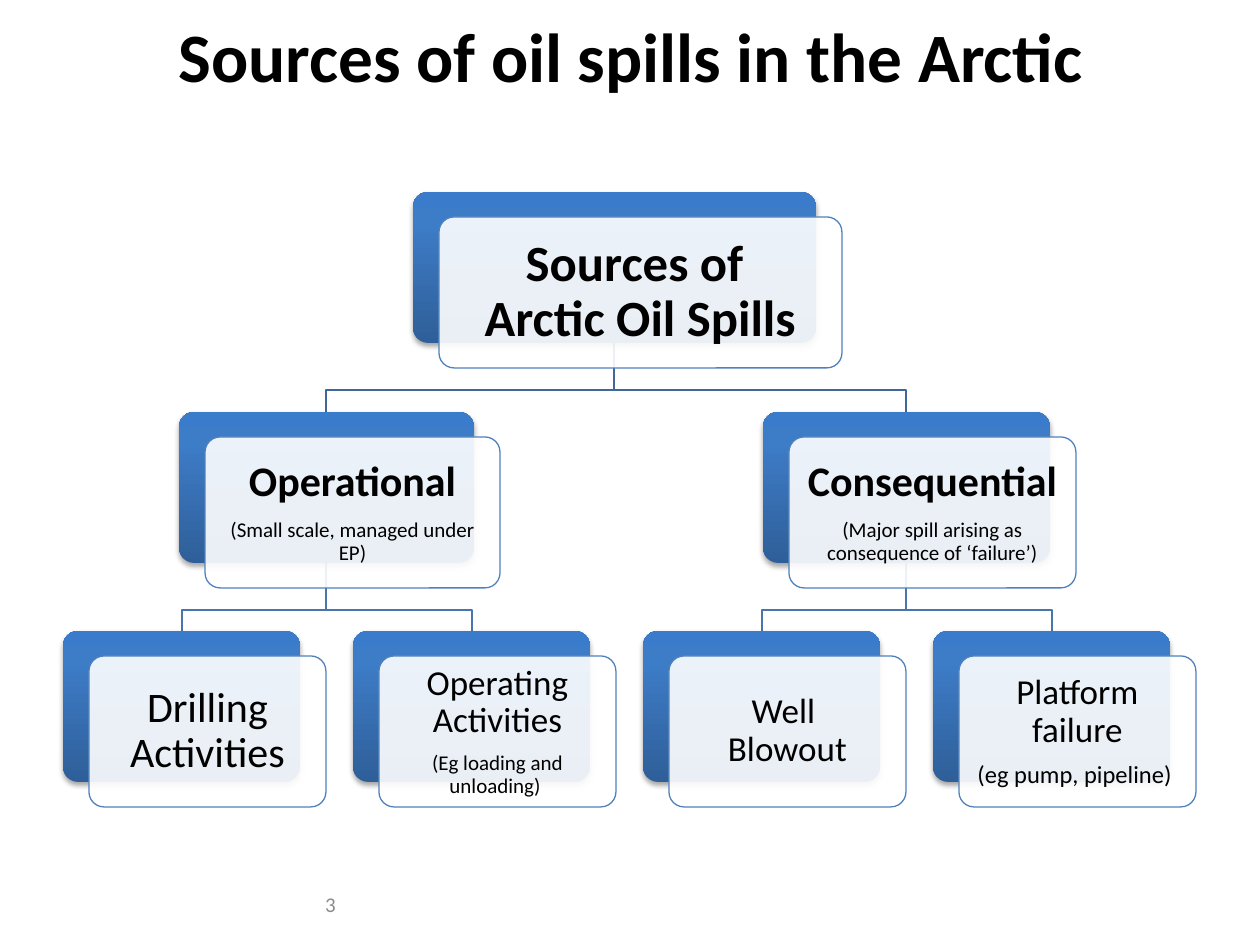
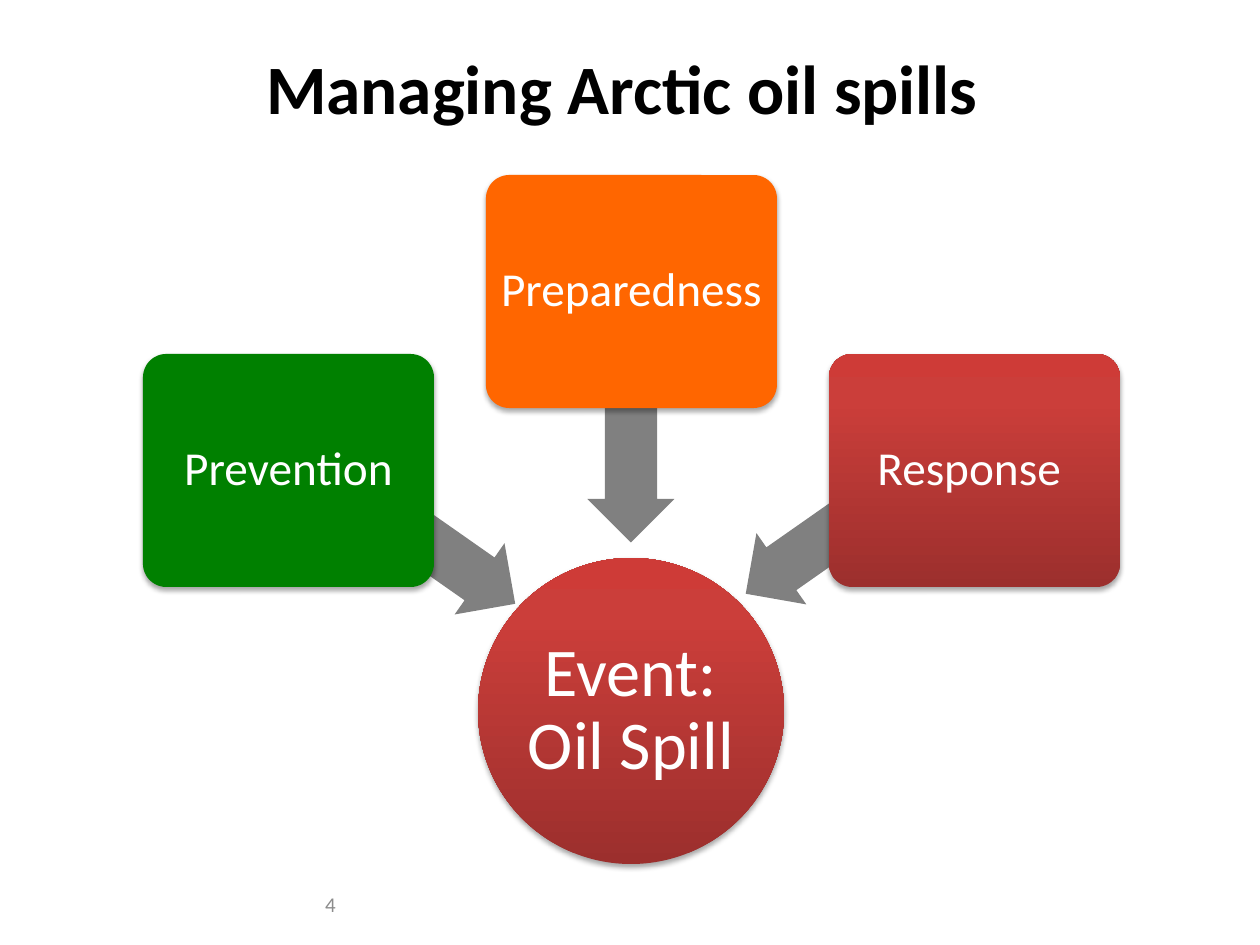
import lxml.etree
import pptx
import pptx.dml.color
import pptx.enum.shapes
import pptx.enum.text
import pptx.oxml.ns
import pptx.util

PX = 914400 / 126
SHAPE = pptx.enum.shapes.MSO_SHAPE
ALIGN = pptx.enum.text.PP_ALIGN
MIDDLE = pptx.enum.text.MSO_ANCHOR.MIDDLE

COLORS = {
    "ink": "000000",
    "white": "FFFFFF",
    "number": "8C8C8C",
    "outline": "4F81BD",
    "upper_edge": "3F6797",
    "lower_edge": "4875AC",
    "prevention": "008000",
    "preparedness": "FF6600",
    "arrow": "808080",
}
GRADIENTS = {
    "blue": ((0, "2F5F99"), (80, "3D7CC7"), (100, "3A7CCB")),
    "red": ((0, "9C2F2D"), (80, "CB3E3A"), (100, "CE3B37")),
}
TITLE = {"size": pptx.util.Pt(39.6), "bold": True}
NUMBER = {"size": pptx.util.Pt(12)}

NODE_HEIGHT = 151
LABEL_SHIFT = (26, 25)
EDGE_DROP = 47
LEVEL_TOPS = (192, 412, 631)
LEAF_LEFT, LEAF_STEP, LEAF_WIDTH = 63, 290, 237
CARD_LEFT, CARD_STEP, CARD_SIZE = 143, 343, (291, 233)


def px(value):
    return pptx.util.Emu(round(value * PX))


def rgb(name):
    return pptx.dml.color.RGBColor.from_string(COLORS[name])


def add_element(parent, tag, **values):
    element = lxml.etree.SubElement(parent, pptx.oxml.ns.qn(tag))
    for key, value in values.items():
        element.set(key, str(value))
    return element


def set_attributes(target, values):
    for name, value in values.items():
        setattr(target, name, value)


def write(shape, lines, color, inset=None, align=ALIGN.CENTER, tight=False):
    frame = shape.text_frame
    set_attributes(frame, {"word_wrap": True, "vertical_anchor": MIDDLE})
    if inset is not None:
        sides = ("left", "top", "right", "bottom")
        set_attributes(frame, {f"margin_{side}": px(inset) for side in sides})
    for index, (text, style) in enumerate(lines):
        para = frame.add_paragraph() if index else frame.paragraphs[0]
        para.alignment = align
        if tight:
            para.line_spacing = 0.9
            after = add_element(para._p.get_or_add_pPr(), "a:spcAft")
            add_element(after, "a:spcPct", val=35000)
        para.text = text
        for span in para.runs:
            set_attributes(span.font, {"name": "Calibri", **style})
            span.font.color.rgb = rgb(color)


def add_text(page, left, top, width, height, text, color, style, align):
    box = page.shapes.add_textbox(px(left), px(top), px(width), px(height))
    write(box, [(text, style)], color, align=align)


def fill_gradient(shape, name):
    shape.fill.gradient()
    shape.fill.gradient_angle = 90
    stops = shape._element.spPr.find(".//" + pptx.oxml.ns.qn("a:gsLst"))
    for stop in list(stops):
        stops.remove(stop)
    for position, color in GRADIENTS[name]:
        stop = add_element(stops, "a:gs", pos=position * 1000)
        add_element(stop, "a:srgbClr", val=color)


def add_shadow(shape):
    effects = shape._element.spPr.find(pptx.oxml.ns.qn("a:effectLst"))
    shadow = add_element(
        effects, "a:outerShdw", blurRad=pptx.util.Pt(3.1), dist=pptx.util.Pt(1.8),
        dir=90 * 60000, rotWithShape=0)
    color = add_element(shadow, "a:srgbClr", val=COLORS["ink"])
    add_element(color, "a:alpha", val=35000)


def add_block(page, kind, left, top, width, height, fill, shadow=True):
    shape = page.shapes.add_shape(kind, px(left), px(top), px(width), px(height))
    shape.shadow.inherit = False
    shape.line.fill.background()
    if kind == SHAPE.ROUNDED_RECTANGLE:
        shape.adjustments[0] = 0.1
    if fill in GRADIENTS:
        fill_gradient(shape, fill)
    else:
        shape.fill.solid()
        shape.fill.fore_color.rgb = rgb(fill)
    if shadow:
        add_shadow(shape)
    return shape


def outline(shape, color):
    shape.line.color.rgb = rgb(color)
    shape.line.width = pptx.util.Pt(0.75)


def add_node(page, left, top, width, inset, lines):
    add_block(page, SHAPE.ROUNDED_RECTANGLE, left, top, width, NODE_HEIGHT, "blue")
    across, down = LABEL_SHIFT
    label = add_block(page, SHAPE.ROUNDED_RECTANGLE, left + across, top + down,
                      width, NODE_HEIGHT, "white", shadow=False)
    fill = label._element.spPr.find(pptx.oxml.ns.qn("a:solidFill"))
    add_element(fill[0], "a:alpha", val=90000)
    outline(label, "outline")
    write(label, lines, "ink", inset, tight=True)


def add_edge(page, parent, child, color):
    start, end = parent[0] + parent[2] / 2, child[0] + child[2] / 2
    bottom = parent[1] + NODE_HEIGHT
    bend = bottom + EDGE_DROP
    builder = page.shapes.build_freeform(start, bottom, scale=PX)
    builder.add_line_segments([(start, bend), (end, bend), (end, child[1])], close=False)
    edge = builder.convert_to_shape()
    edge.shadow.inherit = False
    edge.fill.background()
    outline(edge, color)


def add_arrow(page, left, top, rotation):
    arrow = add_block(page, SHAPE.LEFT_ARROW, left, top, 252, 87, "arrow", shadow=False)
    arrow.rotation = rotation
    arrow.adjustments[0] = 0.6
    arrow.adjustments[1] = 0.5


def add_page(deck, title, left, top, number):
    page = deck.slides.add_slide(deck.slide_layouts[6])
    add_text(page, left, top, 1134, 97, title, "ink", TITLE, ALIGN.CENTER)
    add_text(page, 54, 879, 294, 50, number, "number", NUMBER, ALIGN.RIGHT)
    return page


def style(size, bold=False):
    return {"size": pptx.util.Pt(size), "bold": bold}


def add_sources(deck):
    page = add_page(deck, "Sources of oil spills in the Arctic", 64, 6, "3")
    root_top, branch_top, leaf_top = LEVEL_TOPS
    root = (413, root_top, 403, 15, [("Sources of \vArctic Oil Spills", style(29, True))])
    branches = [
        (179, branch_top, 295, 13, [
            ("Operational", style(24, True)),
            ("(Small scale, managed under EP)", style(12))]),
        (763, branch_top, 287, 13, [
            ("Consequential", style(24, True)),
            ("(Major spill arising as consequence of ‘failure’)", style(12))]),
    ]
    leaf_texts = [
        (13, [("Drilling Activities", style(24))]),
        (10, [("Operating Activities", style(20)),
              ("(Eg loading and unloading) ", style(12))]),
        (10, [("Well \vBlowout", style(20))]),
        (10, [("Platform failure", style(20)), ("(eg pump, pipeline) ", style(14))]),
    ]
    leaves = [(LEAF_LEFT + index * LEAF_STEP, leaf_top, LEAF_WIDTH, inset, lines)
              for index, (inset, lines) in enumerate(leaf_texts)]
    for index, leaf in enumerate(leaves):
        add_edge(page, branches[index // 2], leaf, "lower_edge")
    for branch in branches:
        add_edge(page, root, branch, "upper_edge")
    for node in (root, *branches, *leaves):
        add_node(page, *node)


def add_management(deck):
    page = add_page(deck, "Managing Arctic oil spills ", 63, 38, "4")
    event = add_block(page, SHAPE.OVAL, 478, 558, 306, 306, "red")
    write(event, [("Event: Oil Spill ", style(39))], "white", 4, tight=True)
    measures = [
        ("Prevention", "prevention", 354, (286, 488, 215)),
        ("Preparedness ", "preparedness", 175, (505, 373, 270)),
        ("Response ", "red", 354, (723, 478, 325)),
    ]
    for index, (name, fill, top, arrow) in enumerate(measures):
        add_arrow(page, *arrow)
        card = add_block(page, SHAPE.ROUNDED_RECTANGLE, CARD_LEFT + index * CARD_STEP,
                         top, *CARD_SIZE, fill)
        write(card, [(name, style(27))], "white", 8, tight=True)


def main():
    deck = pptx.Presentation()
    deck.slide_width, deck.slide_height = px(1260), px(945)
    add_sources(deck)
    add_management(deck)
    deck.save("out.pptx")


if __name__ == "__main__":
    main()
